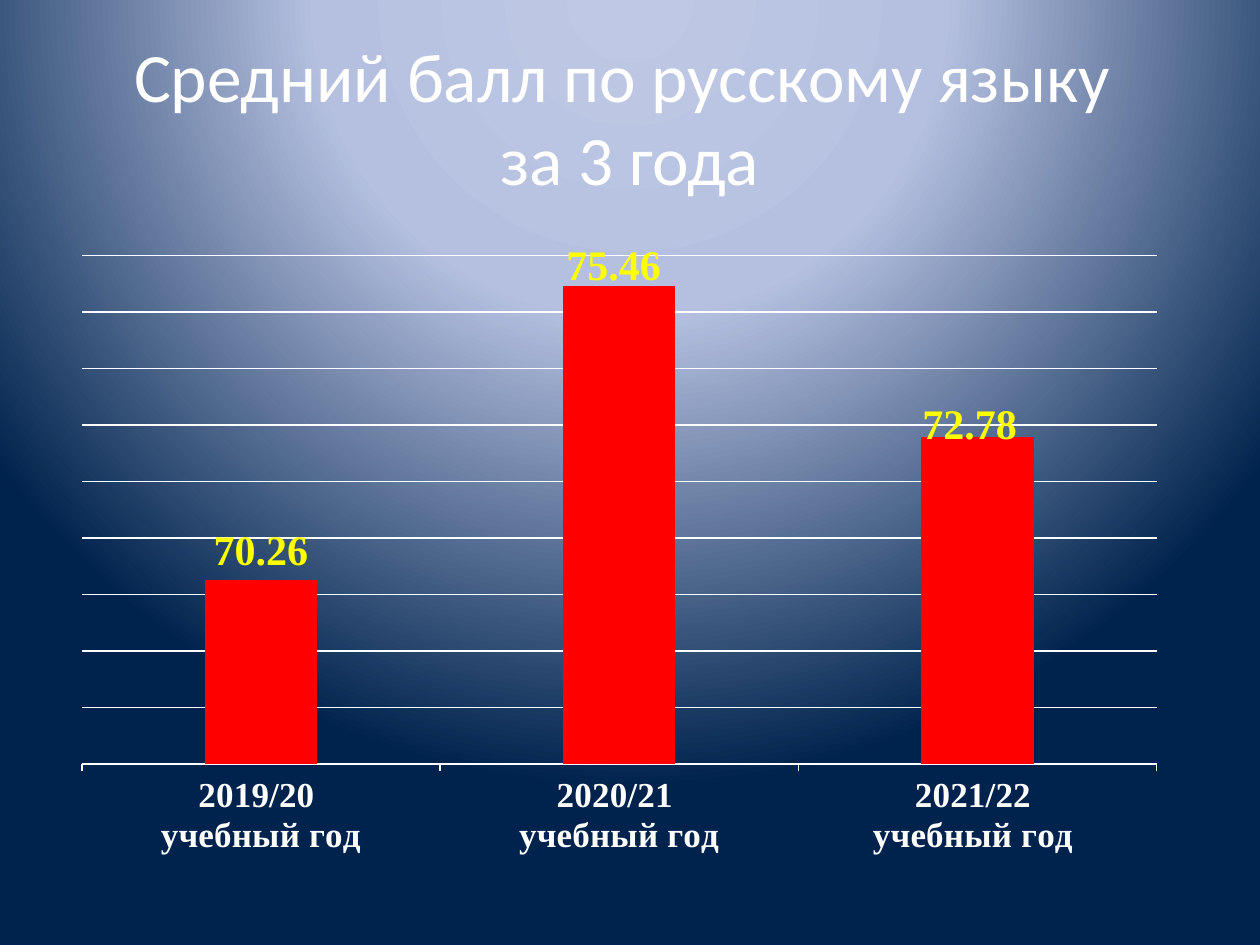
from pptx import Presentation
from pptx.chart.data import CategoryChartData
from pptx.dml.color import RGBColor
from pptx.enum.chart import XL_CHART_TYPE, XL_LABEL_POSITION, XL_TICK_LABEL_POSITION, XL_TICK_MARK
from pptx.enum.text import MSO_ANCHOR, MSO_AUTO_SIZE, PP_ALIGN
from pptx.oxml import parse_xml
from pptx.oxml.ns import nsdecls
from pptx.util import Inches, Pt


def color(value):
    return RGBColor.from_string(value)


def manual_layout(target="", **parts):
    target_tag = f'<c:layoutTarget val="{target}"/>' if target else ""
    modes = "".join(f'<c:{axis}Mode val="edge"/>' for axis in "xy") if target else ""
    sizes = "".join(f'<c:{name} val="{value}"/>' for name, value in parts.items())
    return parse_xml(
        f'<c:layout {nsdecls("c")}><c:manualLayout>{target_tag}{modes}{sizes}'
        "</c:manualLayout></c:layout>"
    )


class ScoreSlide:
    heading_font = "Calibri"
    chart_font = "Times New Roman"
    white, bar, label = "FFFFFF", "FF0000", "FFFF00"

    def __init__(self, deck):
        self.deck = deck
        self.page = deck.slides.add_slide(deck.slide_layouts[5])

    def area(self, left, top, width, height):
        across, down = self.deck.slide_width, self.deck.slide_height
        return int(left * across), int(top * down), int(width * across), int(height * down)

    def style(self, font, size, value, name, bold=False):
        font.size, font.name, font.bold = Pt(size), name, bold
        font.color.rgb = color(value)

    def line(self, line_format):
        line_format.color.rgb = color(self.white)
        line_format.width = Pt(0.75)

    def background(self, stops):
        fill = self.page.background.fill
        fill.gradient()
        gradient = self.page.background._cSld.find(".//" + "{http://schemas.openxmlformats.org/drawingml/2006/main}gradFill")
        marks = "".join(
            f'<a:gs pos="{share * 1000}"><a:srgbClr val="{value}"/></a:gs>'
            for share, value in stops
        )
        radial = parse_xml(
            f'<a:gradFill {nsdecls("a")} rotWithShape="1"><a:gsLst>{marks}</a:gsLst>'
            '<a:path path="circle"><a:fillToRect l="50000" t="-80000" r="50000" b="180000"/>'
            "</a:path></a:gradFill>"
        )
        gradient.getparent().replace(gradient, radial)

    def title(self, text, *place):
        box = self.page.shapes.title
        box.left, box.top, box.width, box.height = self.area(*place)
        frame = box.text_frame
        frame.text = text
        frame.word_wrap = True
        frame.auto_size = MSO_AUTO_SIZE.NONE
        frame.vertical_anchor = MSO_ANCHOR.MIDDLE
        para = frame.paragraphs[0]
        para.alignment = PP_ALIGN.CENTER
        self.style(para.font, 39.6, self.white, self.heading_font)

    def columns(self, scores, *place):
        data = CategoryChartData()
        data.categories = list(scores)
        data.add_series("Series 1", list(scores.values()))
        chart = self.page.shapes.add_chart(
            XL_CHART_TYPE.COLUMN_CLUSTERED, *self.area(*place), data
        ).chart
        chart.has_title = chart.has_legend = False
        self.style(chart.font, 10, self.white, self.heading_font)
        self.axes(chart)

        plot = chart.plots[0]
        plot.gap_width, plot.overlap, plot.vary_by_categories = 219, -27, False
        area = chart._chartSpace.chart.plotArea
        for old in area.findall("{*}layout"):
            area.remove(old)
        area.insert(0, manual_layout("inner", x=0.017, y=0.053, w=0.966, h=0.76))

        series = plot.series[0]
        series.format.fill.solid()
        series.format.fill.fore_color.rgb = color(self.bar)
        labels = series.data_labels
        labels.show_value = True
        labels.position = XL_LABEL_POSITION.OUTSIDE_END
        self.style(labels.font, 24, self.label, self.chart_font, True)
        return series

    def axes(self, chart):
        years = chart.category_axis
        years.major_tick_mark = XL_TICK_MARK.OUTSIDE
        years.tick_label_position = XL_TICK_LABEL_POSITION.LOW
        self.style(years.tick_labels.font, 20, self.white, self.chart_font, True)
        self.line(years.format.line)
        values = chart.value_axis
        values.visible = False
        values.minimum_scale, values.maximum_scale, values.major_unit = 67, 76, 1
        values.has_major_gridlines = True
        self.line(values.major_gridlines.format.line)

    def shift_label(self, series, index, x, y):
        label = series.points[index].data_label
        self.style(label.font, 24, self.label, self.chart_font, True)
        label.position = XL_LABEL_POSITION.OUTSIDE_END
        for entry in series._element.findall(".//{*}dLbl"):
            if entry.find("{*}idx").get("val") == str(index):
                entry.insert(1, manual_layout(x=x, y=y))


def main():
    deck = Presentation()
    deck.slide_width, deck.slide_height = Inches(10), Inches(7.5)
    slide = ScoreSlide(deck)
    slide.background([(0, "BFC9E5"), (40, "B5C0E0"), (100, "00234D")])
    slide.title("Средний балл по русскому языку \vза 3 года", 0.05, 0.04, 0.9, 1 / 6)
    scores = {
        "2019/20 \nучебный год": 70.26,
        "2020/21 \nучебный год": 75.46,
        "2021/22 \nучебный год ": 72.78,
    }
    series = slide.columns(scores, 0.05, 0.233, 0.883, 0.708)
    slide.shift_label(series, 1, -0.005, 0.013)
    slide.shift_label(series, 2, -0.007, 0.024)
    deck.save("out.pptx")


if __name__ == "__main__":
    main()
